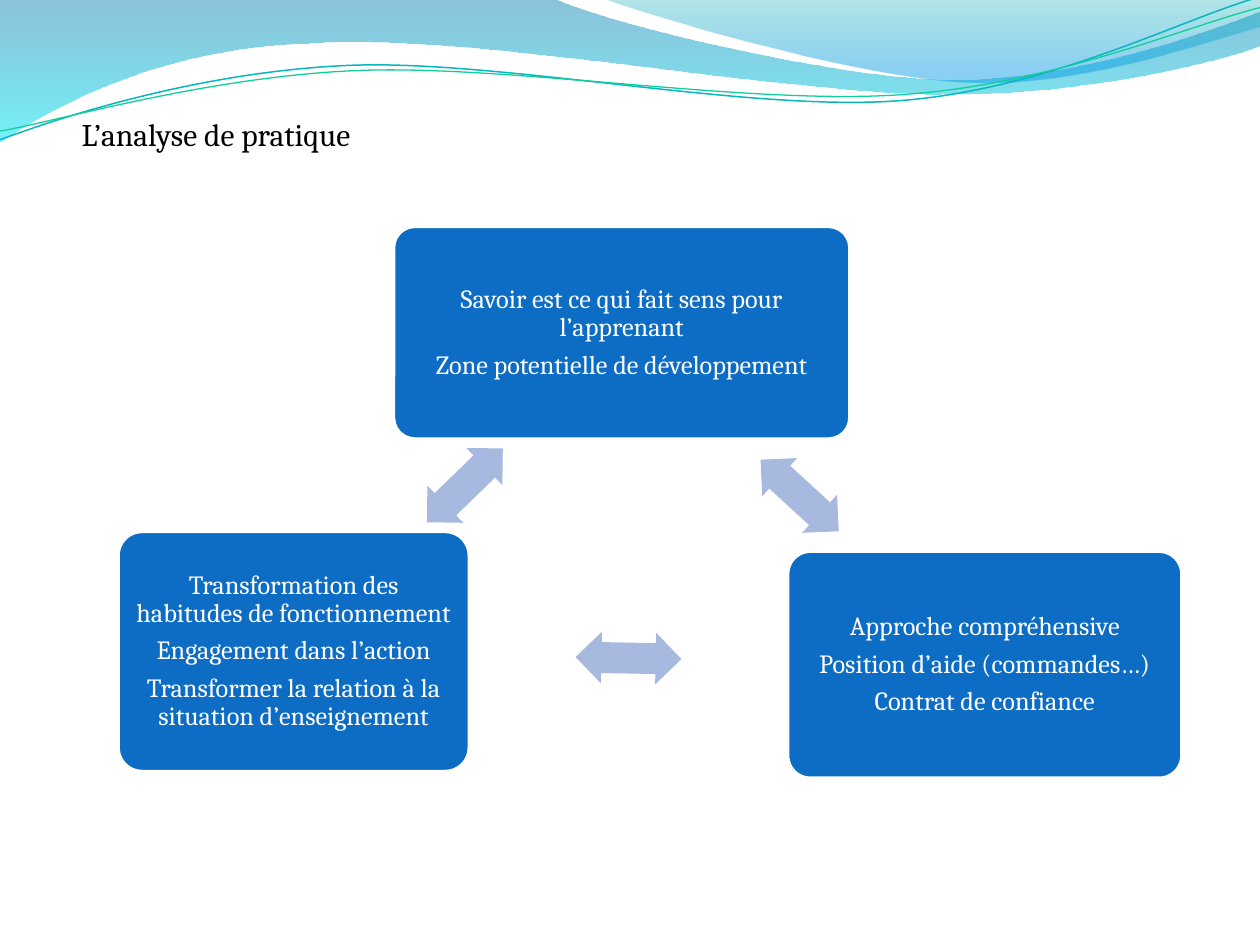
"""Build the slide on practice analysis: three linked boxes under a wave banner."""
from lxml import etree
from pptx import Presentation
from pptx.dml.color import RGBColor
from pptx.enum import shapes, text
from pptx.oxml import ns
from pptx.util import Pt

FONT = "Cambria"
BLACK = RGBColor(0x00, 0x00, 0x00)
WHITE = RGBColor(0xFF, 0xFF, 0xFF)
BLUE = RGBColor(0x0D, 0x6D, 0xC5)
LAVENDER = RGBColor(0xA7, 0xB9, 0xDF)
DEEP_BLUE = RGBColor(0x00, 0x79, 0xAD)
CYAN = RGBColor(0x00, 0xE9, 0xF7)
TEAL = RGBColor(0x00, 0xAB, 0xB4)
SKY = RGBColor(0x00, 0x99, 0xE4)
LINE_TEAL = RGBColor(0x09, 0xB6, 0xBE)
LINE_GREEN = RGBColor(0x10, 0xCF, 0x9B)


def add_wave(s, start, segments, close):
    fb = s.shapes.build_freeform(Pt(start[0]), Pt(start[1]))
    fb.add_line_segments([(Pt(seg[-2]), Pt(seg[-1])) for seg in segments], close=close)
    sp = fb.convert_to_shape()
    sp.shadow.inherit = False
    for line, seg in zip(list(sp.element.iter(ns.qn("a:lnTo"))), segments):
        if len(seg) == 6:
            curve = etree.Element(ns.qn("a:cubicBezTo"))
            for x, y in zip(seg[::2], seg[1::2]):
                pt = etree.SubElement(curve, ns.qn("a:pt"))
                pt.set("x", str(Pt(x) - sp.left))
                pt.set("y", str(Pt(y) - sp.top))
            line.getparent().replace(line, curve)
    return sp


prs = Presentation()
prs.slide_width, prs.slide_height = Pt(720), Pt(540)
s = prs.slides.add_slide(prs.slide_layouts[6])

bands = [
    ((0, 0), [(316.8, -0.7), (342.7, 12.2, 478, 45.4, 545.8, 45.4),
              (614.2, 45.4, 689.8, 18.7, 720, 6.5), (720.7, 25.9),
              (707.8, 31.7, 626.4, 54.7, 537.1, 54), (447.8, 54, 275, 20.2, 185, 24.5),
              (92.9, 25.9, 33.1, 59.8, -0.7, 81.4)],
     [(0, DEEP_BLUE, 45), (1, CYAN, 55)]),
    ((344.9, -0.7), [(366.5, 7.9, 491, 44.6, 553.7, 46.8),
                     (616.3, 49.7, 691.9, 23, 720, 15.1), (720, 0)],
     [(0, TEAL, 30), (0.8, SKY, 45)]),
]
for start, segments, stops in bands:
    sp = add_wave(s, start, segments, True)
    sp.line.fill.background()
    sp.fill.gradient()
    sp.fill.gradient_angle = 270
    for stop, (position, color, _) in zip(sp.fill.gradient_stops, stops):
        stop.position = position
        stop.color.rgb = color
    for clr, (_, _, opacity) in zip(sp.element.spPr.iter(ns.qn("a:srgbClr")), stops):
        etree.SubElement(clr, ns.qn("a:alpha")).set("val", str(opacity * 1000))

strands = [
    ((0, 79.9), [(34.6, 67, 113.8, 41, 199.4, 37.4), (284.4, 33.8, 427, 64.1, 513.4, 57.6),
                 (599.8, 51.1, 675.4, 10.8, 718.6, -1.4)], LINE_TEAL, 0.85),
    ((0, 74.9), [(33.8, 69.1, 118.1, 43.9, 203.8, 40.3), (290.2, 36.7, 429.8, 60.5, 516.2, 54),
                 (601.9, 48.2, 677.5, 15.1, 720, 4.3)], LINE_GREEN, 0.75),
]
for start, segments, color, width in strands:
    sp = add_wave(s, start, segments, False)
    sp.fill.background()
    sp.line.color.rgb = color
    sp.line.width = Pt(width)

boxes = [
    (224.9, 129.4, 260.8, 121.5,
     ["Savoir est ce qui fait sens pour l’apprenant", "Zone potentielle de développement"]),
    (450.1, 315, 225.3, 129.7,
     ["Approche compréhensive", "Position d’aide (commandes…)", "Contrat de confiance"]),
    (67.5, 303.7, 200.7, 137.2,
     ["Transformation des habitudes de fonctionnement", "Engagement dans l’action",
      "Transformer la relation à la situation d’enseignement"]),
]
for x, y, w, h, lines in boxes:
    sp = s.shapes.add_shape(shapes.MSO_SHAPE.ROUNDED_RECTANGLE, Pt(x), Pt(y), Pt(w), Pt(h))
    sp.shadow.inherit = False
    sp.adjustments[0] = 0.1
    sp.fill.solid()
    sp.fill.fore_color.rgb = BLUE
    sp.line.color.rgb = WHITE
    sp.line.width = Pt(2)
    tf = sp.text_frame
    tf.word_wrap = True
    tf.vertical_anchor = text.MSO_ANCHOR.MIDDLE
    tf.margin_left = tf.margin_right = tf.margin_top = tf.margin_bottom = Pt(5.2)
    tf.text = "\n".join(lines)
    for i, p in enumerate(tf.paragraphs):
        p.alignment = text.PP_ALIGN.CENTER
        p.line_spacing = 0.9
        p.space_before = Pt(5.2 if i else 0)
        p.font.name, p.font.size = FONT, Pt(15)
        p.font.color.rgb = WHITE

for x, y, angle in [(426.7, 268.4, 42.5), (328.9, 361.3, 181.1), (235.4, 262.6, 315.8)]:
    sp = s.shapes.add_shape(shapes.MSO_SHAPE.LEFT_RIGHT_ARROW, Pt(x), Pt(y), Pt(60.5), Pt(29.5))
    sp.shadow.inherit = False
    sp.adjustments[0], sp.adjustments[1] = 0.6, 0.5
    sp.rotation = angle
    sp.fill.solid()
    sp.fill.fore_color.rgb = LAVENDER
    sp.line.fill.background()

sp = s.shapes.add_textbox(Pt(39.6), Pt(62), Pt(177), Pt(29))
tf = sp.text_frame
tf.word_wrap = True
p = tf.paragraphs[0]
p.text = "L’analyse de pratique"
p.font.name, p.font.size = FONT, Pt(18)
p.font.color.rgb = BLACK

prs.save("out.pptx")
